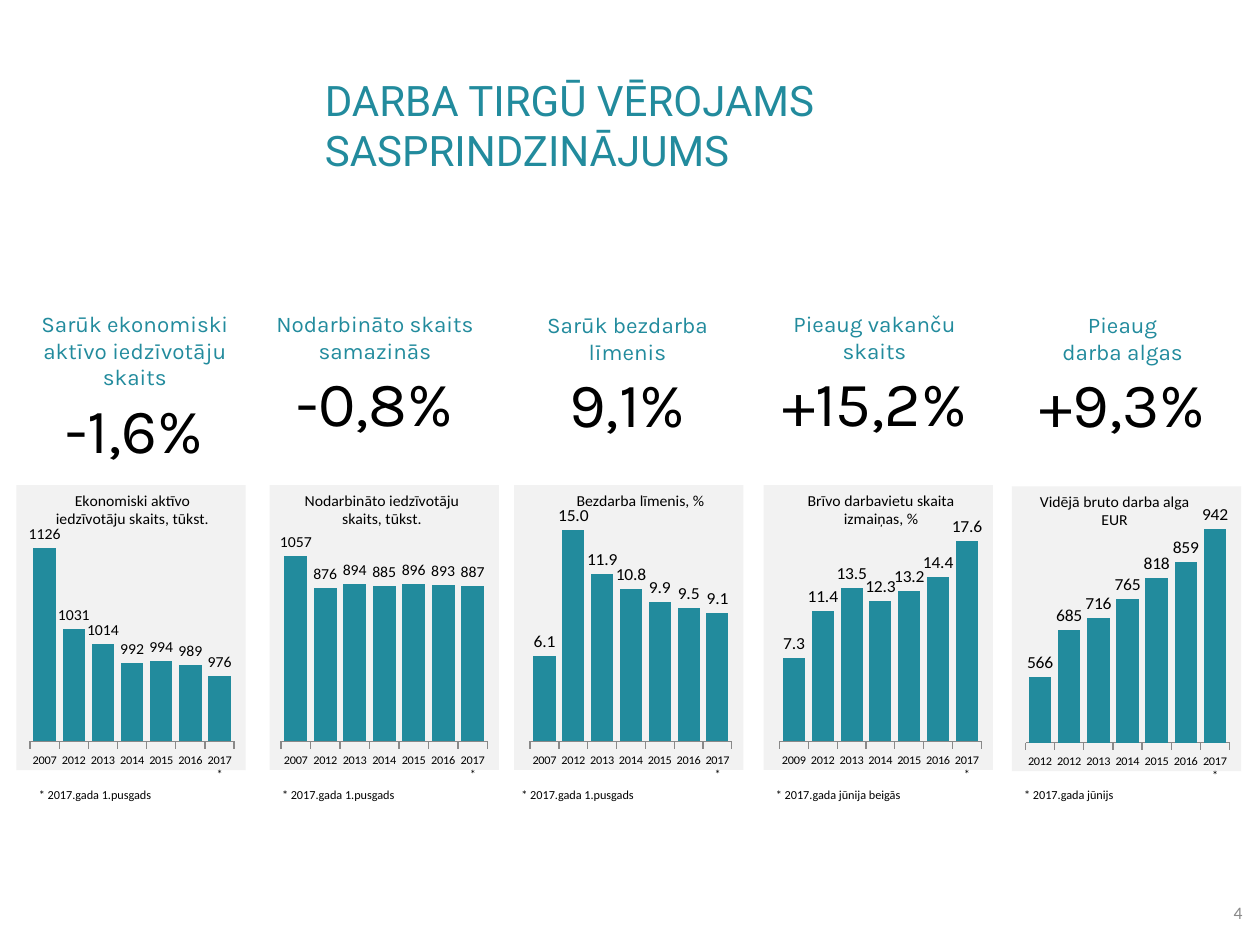
from pptx import Presentation
from pptx.chart.data import CategoryChartData
from pptx.dml.color import RGBColor
from pptx.enum.chart import XL_CHART_TYPE, XL_LABEL_POSITION, XL_TICK_LABEL_POSITION, XL_TICK_MARK
from pptx.enum.text import MSO_ANCHOR, MSO_AUTO_SIZE, PP_ALIGN
from pptx.oxml import parse_xml
from pptx.oxml.ns import nsdecls, qn
from pptx.util import Inches, Pt

TEAL = RGBColor(0x22, 0x8B, 0x9D)
BLACK = RGBColor(0x00, 0x00, 0x00)
GREY = RGBColor(0x89, 0x89, 0x89)
PANEL = RGBColor(0xF2, 0xF2, 0xF2)


class LabourMarketSlide:
    """Styled text boxes and column charts on one slide."""

    def __init__(self, page):
        self.page = page

    def text(self, place, lines, font, align=PP_ALIGN.LEFT, anchor=MSO_ANCHOR.TOP, grow=True):
        box = self.page.shapes.add_textbox(*map(Inches, place))
        frame = box.text_frame
        frame.word_wrap = True
        frame.auto_size = MSO_AUTO_SIZE.SHAPE_TO_FIT_TEXT if grow else MSO_AUTO_SIZE.NONE
        frame.vertical_anchor = anchor
        frame.text = "\n".join(words for words, _, _ in lines)
        for para, (_, size, color) in zip(frame.paragraphs, lines):
            para.alignment = align
            for span in para.runs:
                self.style(span.font, size, color, font)

    def style(self, font, size, color=BLACK, name="Calibri"):
        font.size = Pt(size)
        font.bold = False
        font.name = name
        font.color.rgb = color

    def headline(self, place, labels, figure):
        lines = [(label, 12.8, TEAL) for label in labels] + [(figure, 36, BLACK)]
        self.text(place, lines, "Karla", PP_ALIGN.CENTER)

    def footnote(self, left, words):
        self.text((left, 6.2, 1.33, 0.22), [(words, 7, BLACK)], "Calibri")

    def layout(self, parent, index, position, target=""):
        for old in parent.findall(qn("c:layout")):
            parent.remove(old)
        keys = ("x", "y", "w", "h")[:len(position)]
        modes = "".join(f'<c:{key}Mode val="edge"/>' for key in keys[:2])
        sizes = "".join(f'<c:{key} val="{value}"/>' for key, value in zip(keys, position))
        parent.insert(index, parse_xml(
            f'<c:layout {nsdecls("c")}><c:manualLayout>{target}{modes}{sizes}'
            '</c:manualLayout></c:layout>'))

    def panel_fill(self):
        return parse_xml(
            f'<c:spPr {nsdecls("c", "a")}><a:solidFill><a:srgbClr val="{PANEL}"/></a:solidFill>'
            '<a:ln><a:noFill/></a:ln></c:spPr>')

    def columns(self, left, top, title, title_at, plot_at, first_year, values,
                number_format, label_size=10, minimum=None):
        data = CategoryChartData()
        data.categories = [first_year, "2012", "2013", "2014", "2015", "2016", "2017*"]
        data.add_series("Series 1", values)
        chart = self.page.shapes.add_chart(
            XL_CHART_TYPE.COLUMN_CLUSTERED, Inches(left), Inches(top),
            Inches(1.82), Inches(2.35), data).chart
        self.style(chart.font, 10)
        chart.has_legend = False
        chart.has_title = True
        chart.chart_title.text_frame.text = title
        self.style(chart.chart_title.text_frame.paragraphs[0].runs[0].font, 9)

        years = chart.category_axis
        years.has_major_gridlines = False
        years.major_tick_mark = XL_TICK_MARK.OUTSIDE
        years.tick_label_position = XL_TICK_LABEL_POSITION.LOW
        years.format.line.color.rgb = GREY
        self.style(years.tick_labels.font, 7)
        chart.value_axis.visible = False
        chart.value_axis.has_major_gridlines = False
        if minimum is not None:
            chart.value_axis.minimum_scale = minimum

        plot = chart.plots[0]
        plot.gap_width = 30
        plot.vary_by_categories = False
        fill = plot.series[0].format.fill
        fill.solid()
        fill.fore_color.rgb = TEAL
        plot.has_data_labels = True
        labels = plot.data_labels
        labels.show_value = True
        labels.position = XL_LABEL_POSITION.OUTSIDE_END
        labels.number_format = number_format
        labels.number_format_is_linked = False
        self.style(labels.font, label_size)

        space = chart.element
        area = space.find(qn("c:chart")).find(qn("c:plotArea"))
        self.layout(area, 0, plot_at, '<c:layoutTarget val="inner"/>')
        area.append(self.panel_fill())
        self.layout(space.find(qn("c:chart")).find(qn("c:title")), 1, title_at)
        space.find(qn("c:chart")).addnext(self.panel_fill())


def main():
    deck = Presentation()
    deck.slide_width, deck.slide_height = Inches(10), Inches(7.5)
    slide = LabourMarketSlide(deck.slides.add_slide(deck.slide_layouts[6]))

    slide.text((9.55, 7.08, 0.41, 0.33), [("4", 10, GREY)], "Calibri",
               PP_ALIGN.RIGHT, MSO_ANCHOR.MIDDLE, grow=False)
    slide.text((2.48, 0.42, 7.31, 1.02), [("DARBA TIRGŪ VĒROJAMS SASPRINDZINĀJUMS", 24, TEAL)],
               "Roboto", anchor=MSO_ANCHOR.BOTTOM, grow=False)

    headlines = [
        (0, 2.41, 2.14, ["Sarūk ekonomiski aktīvo iedzīvotāju skaits"], "-1,6%"),
        (1.98, 2.41, 1.99, ["Nodarbināto skaits samazinās"], "-0,8%"),
        (4.05, 2.42, 1.86, ["Sarūk bezdarba līmenis"], "9,1%"),
        (5.9, 2.41, 2.08, ["Pieaug vakanču\vskaits"], "+15,2%"),
        (7.98, 2.42, 1.86, ["Pieaug", "darba algas"], "+9,3%"),
    ]
    for left, top, width, labels, figure in headlines:
        slide.headline((left, top, width, 1.14), labels, figure)

    slide.columns(0.13, 3.85, "Ekonomiski aktīvo iedzīvotāju skaits, tūkst.", (0.16, 0.01),
                  (0.06, 0.15, 0.89, 0.75), "2007",
                  (1126, 1031, 1014, 992, 994, 989, 976), "0", 9)
    slide.columns(2.14, 3.85, "Nodarbināto iedzīvotāju skaits, tūkst.", (0.14, 0.01),
                  (0.05, 0.16, 0.9, 0.74), "2007",
                  (1057, 876, 894, 885, 896, 893, 887), "0", 9)
    slide.columns(4.08, 3.85, "Bezdarba līmenis, %", (0.26, 0.01),
                  (0.07, 0.11, 0.88, 0.79), "2007",
                  (6.1, 15, 11.9, 10.8, 9.9, 9.5, 9.1), "#,##0.0")
    slide.columns(6.06, 3.85, "Brīvo darbavietu skaita izmaiņas, %", (0.18, 0.01),
                  (0.07, 0.1, 0.88, 0.8), "2009",
                  (7.3, 11.4, 13.5, 12.3, 13.2, 14.4, 17.6), "#,##0.0")
    slide.columns(8.03, 3.86, "Vidējā bruto darba alga EUR", (0.11, 0.01),
                  (0.06, 0.07, 0.89, 0.83), "2012",
                  (566, 685, 716, 765, 818, 859, 942), "#,##0", minimum=400)

    half_year = "* 2017.gada 1.pusgads"
    for left, words in [(0.21, half_year), (2.14, half_year), (4.04, half_year),
                        (6.06, "* 2017.gada jūnija beigās"), (8.03, "* 2017.gada jūnijs")]:
        slide.footnote(left, words)

    deck.save("out.pptx")


if __name__ == "__main__":
    main()
